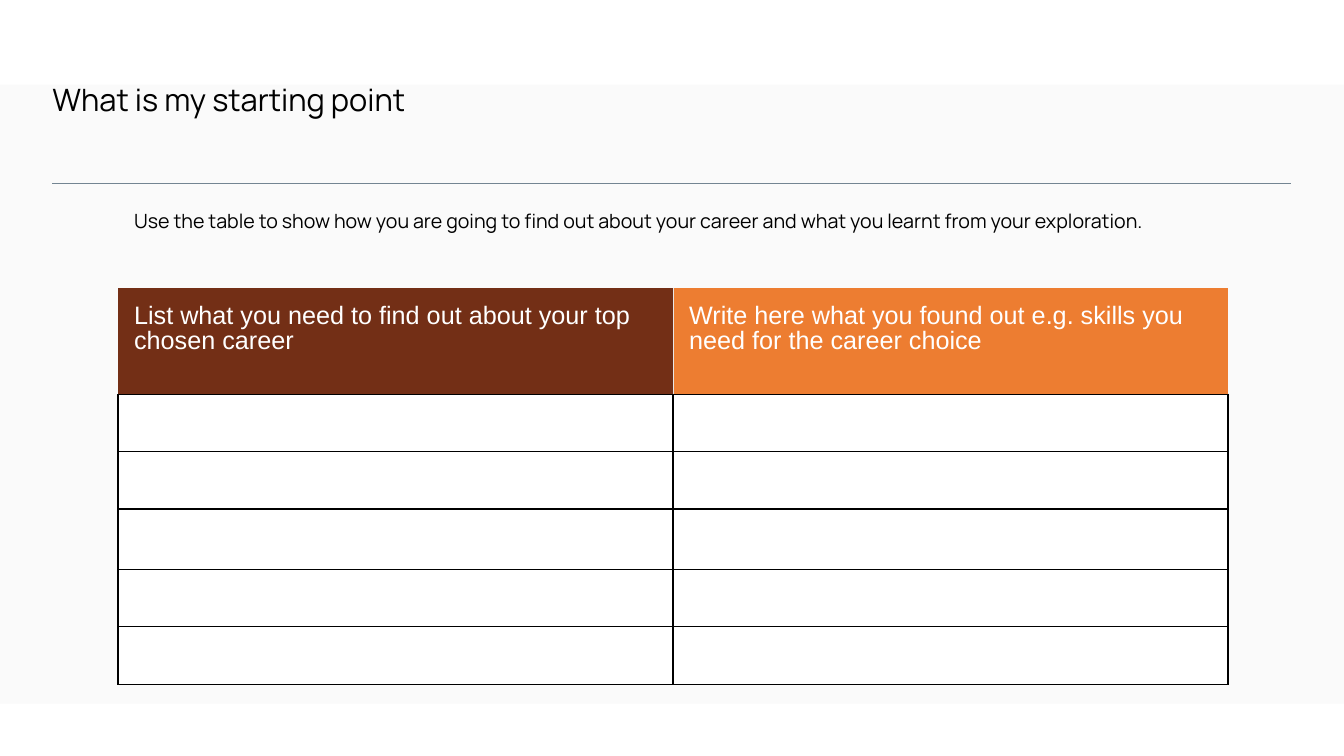
from lxml import etree
from pptx import Presentation
from pptx.dml.color import RGBColor
from pptx.enum import shapes, text
from pptx.oxml import ns
from pptx.util import Inches, Pt

COLORS = {
    "background": "FAFAFA", "white": "FFFFFF", "black": "000000",
    "rule": "738592", "brown": "732F16", "orange": "ED7D31", "divider": "E7E6E6",
}
HEADERS = [
    ("List what you need to find out about your top chosen career", "brown"),
    ("Write here what you found out e.g. skills you need for the career choice", "orange"),
]
ROW_HEIGHTS = [1.05, 0.57, 0.57, 0.6, 0.57, 0.57]
INSTRUCTION = ("Use the table to show how you are going to find out about your "
               "career and what you learnt from your exploration.")


def color(name):
    """Return the named palette colour."""
    return RGBColor.from_string(COLORS[name])


def write_text(frame, words, font_name, size, color_name, spacing, inset=0):
    """Fill a text frame with one left-aligned, top-anchored run."""
    frame.word_wrap = True
    frame.margin_left = frame.margin_right = Inches(inset)
    frame.margin_top = frame.margin_bottom = Inches(inset)
    frame.vertical_anchor = text.MSO_ANCHOR.TOP
    write_paragraph(frame.paragraphs[0], words, font_name, size, color_name, spacing)


def write_paragraph(paragraph, words, font_name, size, color_name, spacing):
    """Add one formatted run to a paragraph."""
    paragraph.alignment = text.PP_ALIGN.LEFT
    paragraph.line_spacing = spacing
    paragraph.space_before = Pt(0)
    run = paragraph.add_run()
    run.text = words
    run.font.name = font_name
    run.font.size = Pt(size)
    run.font.color.rgb = color(color_name)


def add_band(slide, left, top, width, height):
    """Draw a plain white band across the slide."""
    band = slide.shapes.add_shape(
        shapes.MSO_SHAPE.RECTANGLE, Inches(left), Inches(top), Inches(width), Inches(height))
    band.shadow.inherit = False
    band.fill.solid()
    band.fill.fore_color.rgb = color("white")
    band.line.fill.background()


def add_heading(slide, left, top, width, height):
    """Place the title and the rule below it."""
    title = slide.shapes.title
    title.left, title.top = Inches(left), Inches(top)
    title.width, title.height = Inches(width), Inches(height)
    title.text_frame.auto_size = text.MSO_AUTO_SIZE.NONE
    write_text(title.text_frame, "What is my starting point", "Manrope", 22, "black", 0.9)
    rule_top = Inches(top + height + 0.25)
    rule = slide.shapes.add_connector(
        shapes.MSO_CONNECTOR.STRAIGHT, Inches(left), rule_top, Inches(left + width), rule_top)
    rule.line.color.rgb = color("rule")
    rule.line.width = Pt(0.5)
    etree.SubElement(rule._element.spPr, ns.qn("a:effectLst"))


def add_instruction(slide, left, top, width, height):
    """Place the sentence that introduces the table."""
    box = slide.shapes.add_textbox(Inches(left), Inches(top), Inches(width), Inches(height))
    write_text(box.text_frame, INSTRUCTION, "Manrope", 14, "black", Pt(12))


def set_borders(cell, borders):
    """Set cell borders from a mapping of side to colour name and width."""
    properties = cell._tc.get_or_add_tcPr()
    for side in "LRTB":
        line = etree.SubElement(properties, ns.qn("a:ln" + side))
        if side not in borders:
            etree.SubElement(line, ns.qn("a:noFill"))
            continue
        color_name, width = borders[side]
        line.set("w", str(Pt(width)))
        fill = etree.SubElement(line, ns.qn("a:solidFill"))
        etree.SubElement(fill, ns.qn("a:srgbClr"), val=COLORS[color_name])


def add_career_table(slide, left, top, width):
    """Place the two-column table with coloured headers and empty rows."""
    frame = slide.shapes.add_table(
        len(ROW_HEIGHTS), len(HEADERS), Inches(left), Inches(top),
        Inches(width), Inches(sum(ROW_HEIGHTS)))
    table = frame.table
    for row, height in zip(table.rows, ROW_HEIGHTS):
        row.height = Inches(height)
    black_line = ("black", 1)
    for row_index, row in enumerate(table.rows):
        for cell, (words, fill_name), inner_side in zip(row.cells, HEADERS, "RL"):
            if row_index == 0:
                set_borders(cell, {inner_side: ("divider", 0.75), "B": black_line})
                cell.margin_left = cell.margin_right = Inches(0.16)
                cell.margin_top = cell.margin_bottom = Inches(0.16)
                write_paragraph(cell.text_frame.paragraphs[0], words, "Arial", 18, "white", Pt(18))
            else:
                set_borders(cell, dict.fromkeys("LRTB", black_line))
                fill_name = "white"
            cell.fill.solid()
            cell.fill.fore_color.rgb = color(fill_name)


def build_starting_point_slide(presentation):
    """Add the starting point slide."""
    slide = presentation.slides.add_slide(presentation.slide_layouts[5])
    slide.background.fill.solid()
    slide.background.fill.fore_color.rgb = color("background")
    add_band(slide, 0, 6.98, 13.33, 0.52)
    add_band(slide, 0, 0, 13.33, 0.84)
    add_heading(slide, 0.52, 0.84, 12.28, 0.73)
    add_instruction(slide, 1.33, 2.14, 10.69, 0.25)
    add_career_table(slide, 1.17, 2.86, 11.01)


def main():
    """Build and save the presentation."""
    presentation = Presentation()
    presentation.slide_width = Inches(13.33)
    presentation.slide_height = Inches(7.5)
    build_starting_point_slide(presentation)
    presentation.save("out.pptx")


if __name__ == "__main__":
    main()
